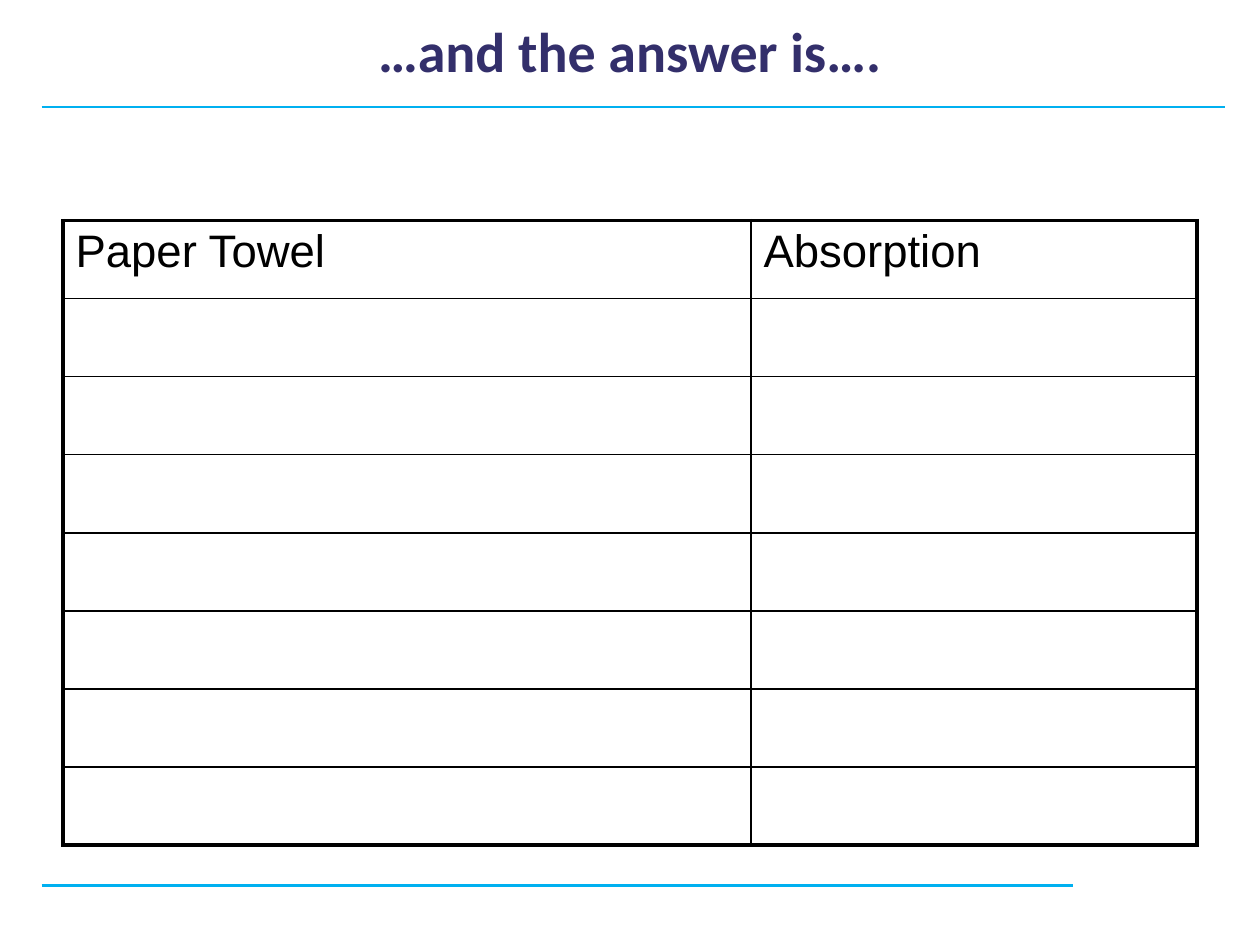
"""Build a slide with a title, two rules and a paper towel results table."""
from lxml import etree
from pptx import Presentation
from pptx.dml.color import RGBColor
from pptx.enum.shapes import MSO_CONNECTOR
from pptx.enum.text import MSO_ANCHOR, PP_ALIGN
from pptx.oxml.ns import qn
from pptx.util import Inches, Pt

STRAIGHT = MSO_CONNECTOR.STRAIGHT
MIDDLE = MSO_ANCHOR.MIDDLE
CENTER = PP_ALIGN.CENTER
WIDE, HIGH = 10, 7.5
HEADS = ["Paper Towel", "Absorption"]
COLS = [5.46, 3.54]
ROWS, STEP = 8, 0.62
THIN, THICK = 1, 2.25


def tint(code):
    """Turn a hex string into a colour."""
    return RGBColor.from_string(code)


def add_run(para, text, face, size, code, bold=False):
    """Add one styled run to a paragraph."""
    run = para.add_run()
    run.text = text
    font = run.font
    font.name, font.size, font.bold = face, Pt(size), bold
    font.color.rgb = tint(code)


def add_rule(slide, left, right, top):
    """Draw a level blue rule."""
    ends = [Inches(n) for n in (left, top, right, top)]
    rule = slide.shapes.add_connector(STRAIGHT, *ends)
    rule.line.color.rgb = tint("00B0F0")
    rule.line.width = Pt(1.5)
    etree.SubElement(rule._element.spPr, qn("a:effectLst"))


def add_title(slide, text):
    """Add the centred slide title."""
    area = [Inches(n) for n in (0.05 * WIDE, -0.19, 0.9 * WIDE, 1.25)]
    frame = slide.shapes.add_textbox(*area).text_frame
    frame.word_wrap = True
    frame.vertical_anchor = MIDDLE
    para = frame.paragraphs[0]
    para.alignment = CENTER
    para.line_spacing = 0.9
    add_run(para, text, "Calibri", 32, "332F6B", True)


def add_edge(cell, side, width):
    """Draw one black border of a cell."""
    props = cell._tc.get_or_add_tcPr()
    edge = etree.SubElement(props, qn(f"a:ln{side}"), w=str(Pt(width)))
    fill = etree.SubElement(edge, qn("a:solidFill"))
    etree.SubElement(fill, qn("a:srgbClr"), val="000000")


def add_grid(slide):
    """Add the table with a thick frame and thin inner lines."""
    area = [Inches(n) for n in (0.05 * WIDE, 1.75, sum(COLS), ROWS * STEP)]
    table = slide.shapes.add_table(ROWS, len(COLS), *area).table
    table.first_row = table.horz_banding = False
    for col, width in zip(table.columns, COLS):
        col.width = Inches(width)
    for r, row in enumerate(table.rows):
        row.height = Inches(STEP)
        for c, cell in enumerate(row.cells):
            outer = {"L": c == 0, "R": c == len(COLS) - 1,
                     "T": r == 0, "B": r == ROWS - 1}
            for side, out in outer.items():
                add_edge(cell, side, THICK if out else THIN)
            cell.fill.background()
    for cell, head in zip(table.rows[0].cells, HEADS):
        add_run(cell.text_frame.paragraphs[0], head, "Arial", 26, "000000")


def main():
    """Build and save the slide."""
    deck = Presentation()
    deck.slide_width, deck.slide_height = Inches(WIDE), Inches(HIGH)
    slide = deck.slides.add_slide(deck.slide_layouts[6])
    add_rule(slide, 0.33, 8.52, 7.03)
    add_rule(slide, 0.33, 9.72, 0.85)
    add_title(slide, "…and the answer is….")
    add_grid(slide)
    deck.save("out.pptx")


if __name__ == "__main__":
    main()
